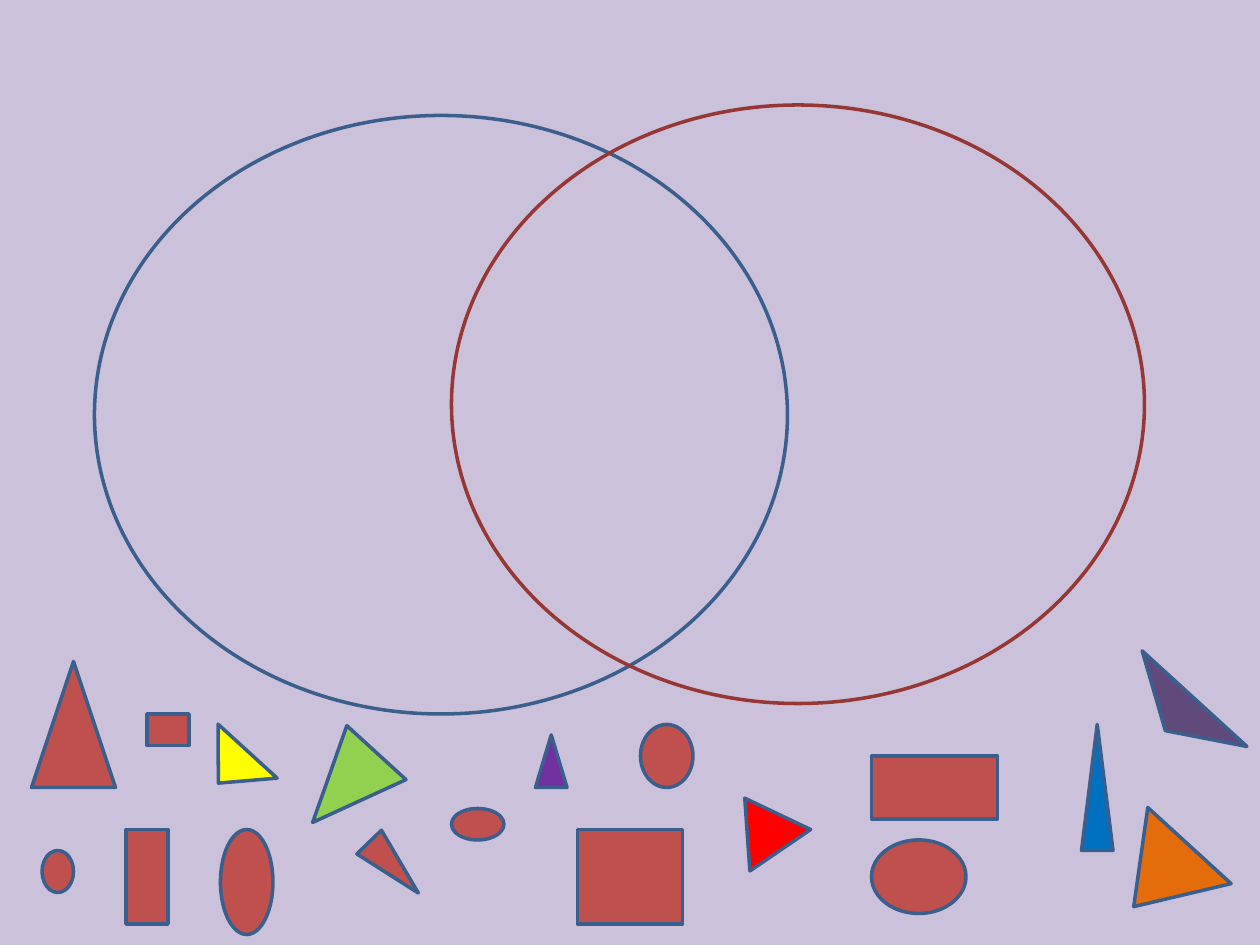
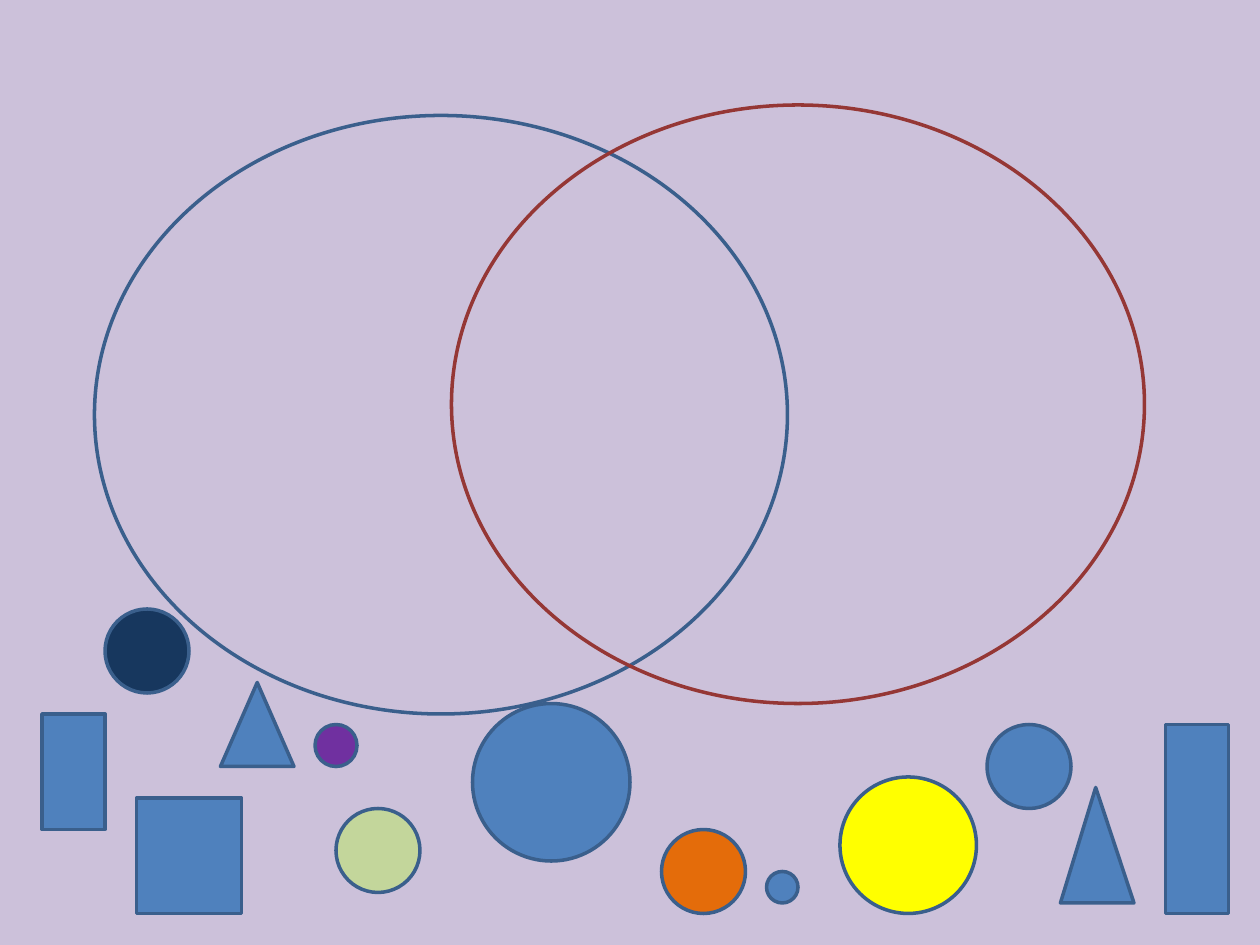
from pptx import Presentation
from pptx import util as u
from pptx.dml.color import RGBColor
from pptx.enum import shapes

PX = 9525
SLIDE_SIZE = (960, 720)
DIAGRAM_BOX = (72, 80, 800, 464)
TRAY_BOX = (0, 464, 960, 256)

COLORS = {
    "background": "CCC1DA",
    "outline": "3A5F8C",
    "dark red": "953735",
    "brick": "C0504D",
    "blue": "4F81BD",
    "purple": "7030A0",
    "violet": "604A7B",
    "sky": "0070C0",
    "navy": "17375E",
    "red": "FF0000",
    "yellow": "FFFF00",
    "lime": "92D050",
    "sage": "C3D69B",
    "orange": "E46C0A",
}

OVAL = shapes.MSO_SHAPE.OVAL
RECTANGLE = shapes.MSO_SHAPE.RECTANGLE
TRIANGLE = shapes.MSO_SHAPE.ISOSCELES_TRIANGLE

# Each piece: kind, (left, top, width, height) within the tray, colour, rotation
MIXED_PIECES = [
    (TRIANGLE, (24, 40, 64, 96), "brick", 0),
    (TRIANGLE, (408, 96, 24, 40), "purple", 0),
    (TRIANGLE, (824, 88, 24, 96), "sky", 0),
    (TRIANGLE, (553, 140, 56, 48), "red", 325.7),
    (TRIANGLE, (287, 170, 26, 54), "brick", 136),
    (TRIANGLE, (147, 104, 61, 33), "yellow", 222.4),
    (RECTANGLE, (96, 168, 32, 72), "brick", 0),
    (RECTANGLE, (440, 168, 80, 72), "brick", 0),
    (RECTANGLE, (664, 112, 96, 48), "brick", 0),
    (OVAL, (168, 168, 40, 80), "brick", 0),
    (RECTANGLE, (112, 80, 32, 24), "brick", 0),
    (OVAL, (344, 152, 40, 24), "brick", 0),
    (OVAL, (664, 176, 72, 56), "brick", 0),
    (OVAL, (32, 184, 24, 32), "brick", 0),
    (OVAL, (488, 88, 40, 48), "brick", 0),
    (TRIANGLE, (232, 100, 61, 72), "lime", 222.4),
    (TRIANGLE, (845, 64, 108, 33), "violet", 222.4),
    (TRIANGLE, (842, 172, 86, 63), "orange", 222.4),
]

CIRCLE_PIECES = [
    (RECTANGLE, (32, 80, 48, 88), "blue", 0),
    (RECTANGLE, (104, 144, 80, 88), "blue", 0),
    (RECTANGLE, (888, 88, 48, 144), "blue", 0),
    (OVAL, (240, 88, 32, 32), "purple", 0),
    (OVAL, (640, 128, 104, 104), "yellow", 0),
    (OVAL, (504, 168, 64, 64), "orange", 0),
    (OVAL, (80, 0, 64, 64), "navy", 0),
    (OVAL, (752, 88, 64, 64), "blue", 0),
    (OVAL, (360, 72, 120, 120), "blue", 0),
    (OVAL, (584, 200, 24, 24), "blue", 0),
    (OVAL, (256, 152, 64, 64), "sage", 0),
    (TRIANGLE, (168, 56, 56, 64), "blue", 0),
    (TRIANGLE, (808, 136, 56, 88), "blue", 0),
]


def color(name):
    return RGBColor.from_string(COLORS[name])


def add_figure(slide, kind, box, bounds, fill=None, line="outline"):
    """Add an outlined preset shape whose bounds are relative to box."""
    left, top, width, height = bounds
    shape = slide.shapes.add_shape(
        kind, (box[0] + left) * PX, (box[1] + top) * PX, width * PX, height * PX)
    shape.shadow.inherit = False
    if fill:
        shape.fill.solid()
        shape.fill.fore_color.rgb = color(fill)
    else:
        shape.fill.background()
    shape.line.color.rgb = color(line)
    shape.line.width = u.Pt(2)
    return shape


def add_venn_diagram(master, slide, box):
    """Build the two overlapping rings and move them to the slide master."""
    size = (528, 456)
    rings = [
        add_figure(slide, OVAL, box, (0, 8, *size), fill="background"),
        add_figure(slide, OVAL, box, (272, 0, *size), line="dark red"),
    ]
    for shape_id, ring in enumerate(rings, start=101):
        ring.element.nvSpPr.cNvPr.id = shape_id
        master.shapes.element.append(ring.element)


def add_tray(slide, box, pieces):
    """Lay out the loose pieces that are to be sorted into the rings."""
    for kind, bounds, fill, rotation in pieces:
        piece = add_figure(slide, kind, box, bounds, fill)
        piece.rotation = rotation
        if (kind, bounds) == (TRIANGLE, (808, 136, 56, 88)):
            piece.adjustments[0] = 0.48


def main():
    presentation = Presentation()
    presentation.slide_width, presentation.slide_height = (
        length * PX for length in SLIDE_SIZE)
    master = presentation.slide_master
    master.background.fill.solid()
    master.background.fill.fore_color.rgb = color("background")

    blank_layout = presentation.slide_layouts.get_by_name("Blank")
    mixed_slide = presentation.slides.add_slide(blank_layout)
    add_venn_diagram(master, mixed_slide, DIAGRAM_BOX)
    add_tray(mixed_slide, TRAY_BOX, MIXED_PIECES)

    circle_slide = presentation.slides.add_slide(blank_layout)
    add_tray(circle_slide, TRAY_BOX, CIRCLE_PIECES)

    presentation.save("out.pptx")


if __name__ == "__main__":
    main()
